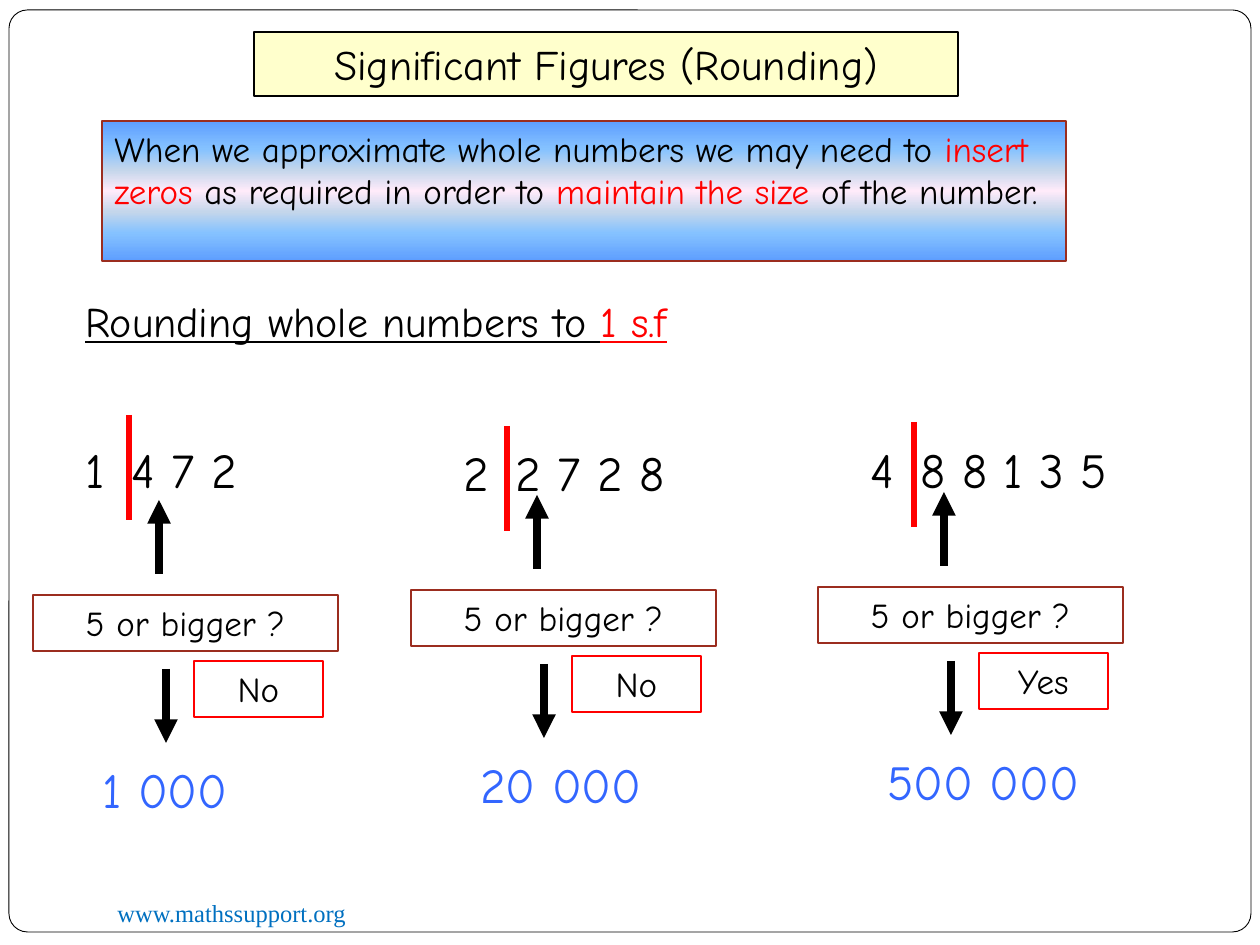
from lxml import etree
from pptx import Presentation
from pptx import util as u
from pptx.dml.color import RGBColor
from pptx.enum import shapes, text
from pptx.oxml.ns import qn

EMU_PER_PX = 914400 / 126
FONT = "Comic Neue"
C = {"black": "000000", "white": "FFFFFF", "red": "FF0000", "brown": "9B2D1F",
     "cream": "FFFFCC", "answer": "3366FF", "link": "0070C0"}
GRADIENT = [(0, "5E9EFF"), (20, "85C2FF"), (35, "C4D6EB"), (50, "FFEBFA"),
            (65, "C4D6EB"), (80, "85C2FF"), (100, "5E9EFF")]

# column x, y shift of the lower steps, y of digits, y of bar, digits, verdict, answer
EXAMPLES = [
    (0, 0, 433, 415, "1", "4 7 2", "No", "1 000"),
    (378, -5, 436, 426, "2", "2 7 2 8", "No", "20 000"),
    (785, -8, 433, 422, "4", "8 8 1 3 5", "Yes", "500 000"),
]


def px(*values):
    return [u.Emu(round(v * EMU_PER_PX)) for v in values]


def rgb(name):
    return RGBColor.from_string(C[name])


def write(sp, runs, size, align=None, font=FONT, underline=None):
    """Fill a shape with one paragraph of (text, colour) runs."""
    tf = sp.text_frame
    tf.word_wrap = True
    tf.vertical_anchor = text.MSO_ANCHOR.TOP
    p = tf.paragraphs[0]
    p.alignment = align or text.PP_ALIGN.LEFT
    for words, color in runs:
        r = p.add_run()
        r.text = words
        r.font.size = u.Pt(size)
        r.font.name = font
        r.font.underline = underline
        r.font.color.rgb = rgb(color)
    return p


def add_label(slide, box, runs, size, **style):
    return write(slide.shapes.add_textbox(*px(*box)), runs, size, **style)


def add_box(slide, box, line, fill=None, kind=shapes.MSO_SHAPE.RECTANGLE, width=0.75):
    sp = slide.shapes.add_shape(kind, *px(*box))
    sp.shadow.inherit = False
    sp.line.color.rgb = rgb(line)
    sp.line.width = u.Pt(width)
    if fill:
        sp.fill.solid()
        sp.fill.fore_color.rgb = rgb(fill)
    else:
        sp.fill.background()
    return sp


def fill_gradient(sp):
    sp.fill.gradient()
    sp.fill.gradient_angle = 270
    stops = sp._element.spPr.find(qn("a:gradFill")).find(qn("a:gsLst"))
    for stop in list(stops):
        stops.remove(stop)
    for percent, color in GRADIENT:
        stop = etree.SubElement(stops, qn("a:gs"), pos=str(percent * 1000))
        etree.SubElement(stop, qn("a:srgbClr"), val=color)


def add_line(slide, x, y1, y2, color, width, arrow=False):
    """Draw a vertical line, with an arrowhead at y2 if asked."""
    line = slide.shapes.add_connector(shapes.MSO_CONNECTOR.STRAIGHT, *px(x, y1, x, y2))
    line.line.color.rgb = rgb(color)
    line.line.width = u.Pt(width)
    if arrow:
        etree.SubElement(line.line._get_or_add_ln(), qn("a:tailEnd"), type="triangle")
    etree.SubElement(line._element.spPr, qn("a:effectLst"))


def add_example(slide, x, shift, digits_y, bar_y, first, rest, verdict, answer):
    center = text.PP_ALIGN.CENTER
    digits = [(first, "black"), (" ", "black"), (rest, "black")]
    p = add_label(slide, (x + 73, digits_y, 305, 72), digits, 28)
    p.runs[1].font._element.set("spc", "600")
    add_line(slide, x + 129, bar_y, bar_y + 105, "red", 3)

    question = add_box(slide, (x + 33, 595 + shift, 305, 56), "brown")
    write(question, [("5 or bigger ?", "black")], 20, align=center)
    add_line(slide, x + 159, 574 + shift, 500 + shift, "black", 4.5, arrow=True)
    add_line(slide, x + 166, 669 + shift, 743 + shift, "black", 4.5, arrow=True)
    add_label(slide, (x + 90, 753 + shift, 254, 72), [(answer, "answer")], 28)
    result = add_box(slide, (x + 194, 661 + shift, 129, 56), "red")
    write(result, [(verdict, "black")], 20, align=center)


def main():
    prs = Presentation()
    prs.slide_width, prs.slide_height = px(1260, 945)
    slide = prs.slides.add_slide(prs.slide_layouts[6])

    frame = add_box(slide, (9, 10, 1242, 922), "black", "white",
                    shapes.MSO_SHAPE.ROUNDED_RECTANGLE, 0.5)
    frame.adjustments[0] = 0.02
    add_label(slide, (105, 892, 410, 43), [("www.mathssupport.org", "link")], 14,
              font="Times New Roman")

    title = add_box(slide, (254, 32, 704, 64), "black", "cream")
    write(title, [("Significant Figures (Rounding)", "black")], 24,
          align=text.PP_ALIGN.CENTER)

    rule = add_box(slide, (102, 121, 964, 140), "brown")
    fill_gradient(rule)
    write(rule, [("When we approximate whole numbers we may need to ", "black"),
                 ("insert zeros", "red"),
                 (" as required in order to ", "black"),
                 ("maintain the size", "red"),
                 (" of the number.", "black")], 20)

    add_label(slide, (73, 289, 696, 63),
              [("Rounding whole numbers to ", "black"), ("1 s.f", "red")], 24,
              underline=True)

    for example in EXAMPLES:
        add_example(slide, *example)

    prs.save("out.pptx")


if __name__ == "__main__":
    main()
